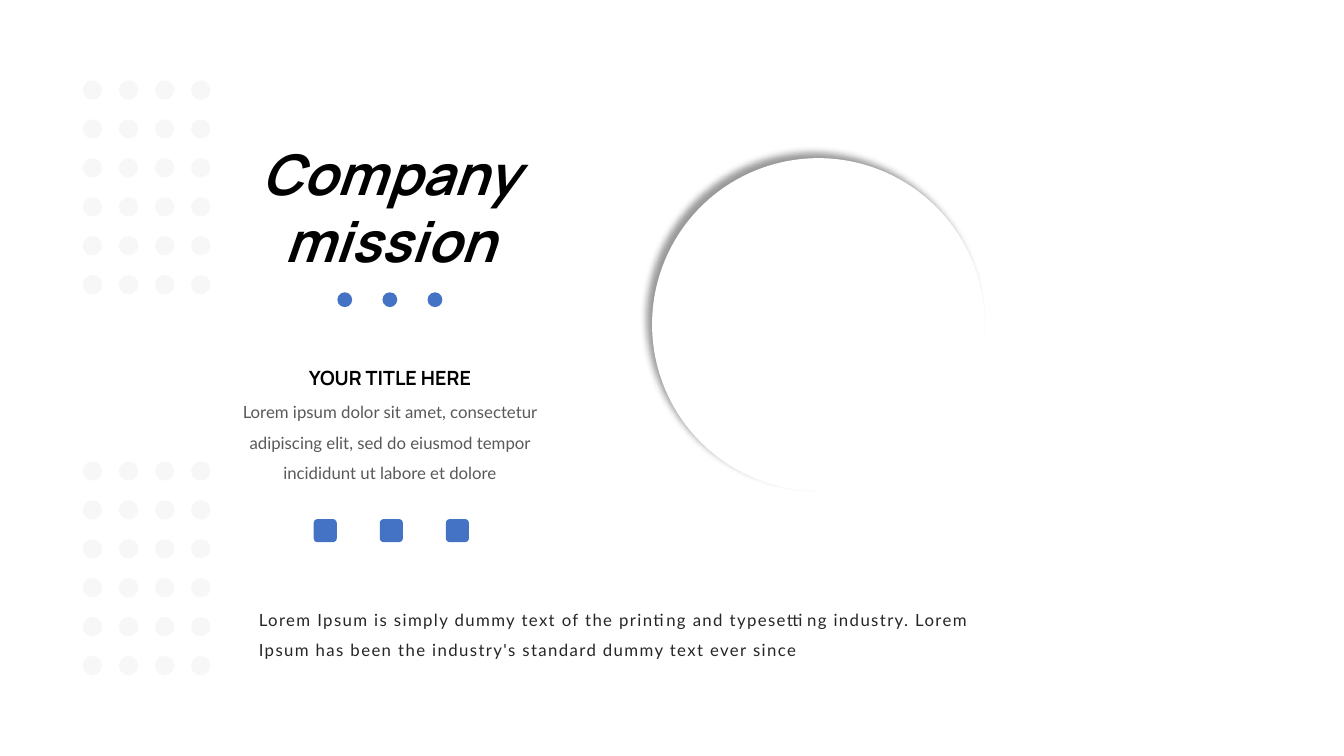
import pptx
import pptx.util
import pptx.dml.color
import pptx.enum.shapes
import pptx.enum.text
import pptx.oxml

Pt = pptx.util.Pt
KIND = pptx.enum.shapes.MSO_SHAPE
ALIGN = pptx.enum.text.PP_ALIGN
FIT = pptx.enum.text.MSO_AUTO_SIZE
BLUE = "4472C4"
SHADE = (
    '<a:outerShdw xmlns:a="http://schemas.openxmlformats.org/drawingml/2006/main" '
    'blurRad="63500" dist="76200" dir="13500000" algn="br" rotWithShape="0">'
    '<a:srgbClr val="000000"><a:alpha val="40000"/></a:srgbClr></a:outerShdw>'
)


def color(code):
    return pptx.dml.color.RGBColor.from_string(code)


def shape(shapes, kind, left, top, wide, high, fill):
    item = shapes.add_shape(kind, Pt(left), Pt(top), Pt(wide), Pt(high))
    item.shadow.inherit = False
    item.fill.solid()
    item.fill.fore_color.rgb = color(fill)
    item.line.fill.background()
    return item


def write(item, text, size, face, fill, align=ALIGN.CENTER, gap=1.0,
          bold=False, slant=False, space=0, wrap=True):
    frame = item.text_frame
    frame.word_wrap = wrap
    frame.auto_size = FIT.SHAPE_TO_FIT_TEXT
    frame.vertical_anchor = pptx.enum.text.MSO_ANCHOR.TOP
    para = frame.paragraphs[0]
    para.alignment = align
    para.line_spacing = gap
    run = para.add_run()
    run.text = text
    font = run.font
    font.size = Pt(size)
    font.name = face
    font.bold = bold
    font.italic = slant
    font.color.rgb = color(fill)
    if space:
        run._r.get_or_add_rPr().set("spc", str(space * 100))


def label(slide, left, top, wide, high, text, *style, **more):
    box = slide.shapes.add_textbox(Pt(left), Pt(top), Pt(wide), Pt(high))
    write(box, text, *style, **more)


def disc(slide, left, top, size):
    item = shape(slide.shapes, KIND.OVAL, left, top, size, size, "FFFFFF")
    effects = item._element.spPr.find(pptx.oxml.ns.qn("a:effectLst"))
    effects.append(pptx.oxml.parse_xml(SHADE))


def dots(slide, left, top, cols, rows, size, across, down, fill):
    group = slide.shapes.add_group_shape()
    for col in range(cols):
        for row in range(rows):
            shape(group.shapes, KIND.OVAL, left + col * across,
                  top + row * down, size, size, fill)


def icons(slide, left, top, size, step):
    for num in range(3):
        shape(slide.shapes, KIND.ROUNDED_RECTANGLE,
              left + num * step, top, size, size, BLUE)


def mission(slide, left, top, wide):
    title = slide.shapes.title
    title.left, title.top = Pt(left), Pt(top)
    title.width, title.height = Pt(wide), Pt(104.4)
    write(title, "Company mission", 40, "Manrope", "000000",
          bold=True, slant=True)
    mid = left + wide / 2
    dots(slide, mid - 37.6, top + 113, 3, 1, 10.6, 32.2, 0, BLUE)
    label(slide, mid - 65.2, top + 162, 130.4, 24.5, "YOUR TITLE HERE",
          14, "Manrope", "000000", bold=True, wrap=False)
    label(slide, mid - 130.7, top + 180.7, 261.4, 69.8,
          "Lorem ipsum dolor sit amet, consectetur adipiscing elit, "
          "sed do eiusmod tempor incididunt ut labore et dolore",
          12, "Lato", "595959", gap=1.5)
    icons(slide, mid - 54.5, top + 275, 16.5, 47.2)


def main():
    deck = pptx.Presentation()
    deck.slide_width, deck.slide_height = Pt(960), Pt(540)
    slide = deck.slides.add_slide(deck.slide_layouts[5])
    slide.background.fill.solid()
    slide.background.fill.fore_color.rgb = color("FFFFFF")
    disc(slide, 465.8, 113, 237.6)
    for top in (57.4, 329.5):
        dots(slide, 59.1, top, 4, 6, 13.9, 25.8, 27.8, "F7F7F7")
    mission(slide, 130.3, 95.8, 296.6)
    label(slide, 177.8, 424.8, 560.2, 48.2,
          "Lorem Ipsum is simply dummy text of the printing and typesetting "
          "industry. Lorem Ipsum has been the industry's standard dummy text "
          "ever since", 12, "Lato", "262626", align=ALIGN.LEFT, gap=1.5,
          space=1)
    deck.save("out.pptx")


if __name__ == "__main__":
    main()
